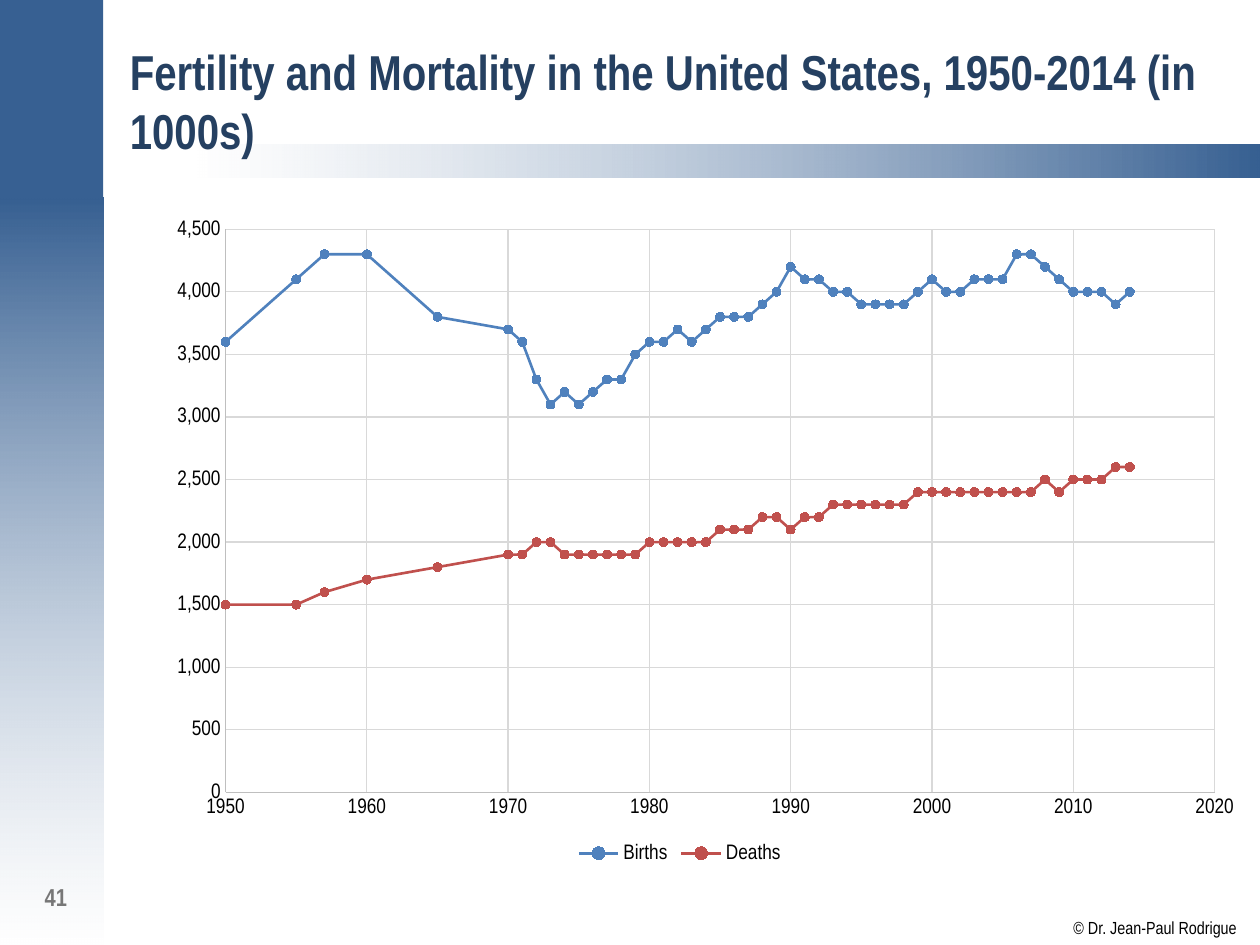
from dataclasses import dataclass
from typing import Any, Optional

from lxml import etree
from pptx import Presentation
from pptx.chart.data import XyChartData
from pptx.dml.color import RGBColor
from pptx.enum.chart import (
    XL_CHART_TYPE, XL_LEGEND_POSITION, XL_MARKER_STYLE, XL_TICK_MARK)
from pptx.enum.shapes import MSO_SHAPE
from pptx.enum.text import MSO_ANCHOR, PP_ALIGN
from pptx.oxml.ns import qn
from pptx.util import Inches, Pt

SCATTER = XL_CHART_TYPE.XY_SCATTER_LINES
BOTTOM = XL_LEGEND_POSITION.BOTTOM
CIRCLE = XL_MARKER_STYLE.CIRCLE
NO_TICK = XL_TICK_MARK.NONE
RECTANGLE = MSO_SHAPE.RECTANGLE
MIDDLE = MSO_ANCHOR.MIDDLE
LEFT, RIGHT = PP_ALIGN.LEFT, PP_ALIGN.RIGHT


@dataclass(frozen=True)
class Theme:
    font: str = "Arial Narrow"
    band: str = "376092"
    paper: str = "FFFFFF"
    title: str = "254061"
    ink: str = "000000"
    number: str = "777777"
    axis: str = "BFBFBF"
    grid: str = "D9D9D9"
    births: str = "4F81BD"
    deaths: str = "C0504D"
    title_size: int = 28
    number_size: int = 14
    chart_size: int = 12
    credit_size: int = 10


@dataclass(frozen=True)
class Box:
    left: float
    top: float
    width: float
    height: float

    def lengths(self) -> list[int]:
        return [Inches(v) for v in (self.left, self.top, self.width, self.height)]


@dataclass(frozen=True)
class Band:
    box: Box
    colors: tuple[str, ...]
    angle: int = 0
    fade: Optional[int] = None


@dataclass(frozen=True)
class Trend:
    name: str
    color: str
    thousands: list[int]


THEME = Theme()
BANDS = [
    Band(Box(-0.01, 1.57, 0.83, 5.93), (THEME.band, THEME.paper), 270, 51),
    Band(Box(1.57, 1.15, 8.43, 0.26), (THEME.paper, THEME.band), 0, 50),
    Band(Box(-0.01, -0.01, 0.83, 1.58), (THEME.band,)),
]
YEARS = [1950, 1955, 1957, 1960, 1965, *range(1970, 2015)]
TRENDS = [
    Trend("Births", THEME.births, [
        3600, 4100, 4300, 4300, 3800,
        3700, 3600, 3300, 3100, 3200, 3100, 3200, 3300, 3300, 3500,
        3600, 3600, 3700, 3600, 3700, 3800, 3800, 3800, 3900, 4000,
        4200, 4100, 4100, 4000, 4000, 3900, 3900, 3900, 3900, 4000,
        4100, 4000, 4000, 4100, 4100, 4100, 4300, 4300, 4200, 4100,
        4000, 4000, 4000, 3900, 4000]),
    Trend("Deaths", THEME.deaths, [
        1500, 1500, 1600, 1700, 1800,
        1900, 1900, 2000, 2000, 1900, 1900, 1900, 1900, 1900, 1900,
        2000, 2000, 2000, 2000, 2000, 2100, 2100, 2100, 2200, 2200,
        2100, 2200, 2200, 2300, 2300, 2300, 2300, 2300, 2300, 2400,
        2400, 2400, 2400, 2400, 2400, 2400, 2400, 2400, 2500, 2400,
        2500, 2500, 2500, 2600, 2600]),
]
CHART_BOX = Box(0.99, 1.65, 8.81, 5.24)
PLOT_BOX = Box(0.8, 0.17, 7.85, 4.47)


def apply(target: Any, values: dict[str, Any]) -> None:
    for name, value in values.items():
        setattr(target, name, value)


def style_font(font: Any, size: int, color: str, bold: bool = False) -> None:
    apply(font, {"name": THEME.font, "size": Pt(size), "bold": bold})
    font.color.rgb = RGBColor.from_string(color)


def style_line(line: Any, color: str, width: float) -> None:
    line.color.rgb = RGBColor.from_string(color)
    line.width = Pt(width)


def paint(fill: Any, color: str) -> None:
    fill.solid()
    fill.fore_color.rgb = RGBColor.from_string(color)


def draw_band(slide: Any, band: Band) -> None:
    shape = slide.shapes.add_shape(RECTANGLE, *band.box.lengths())
    shape.shadow.inherit = False
    shape.line.fill.background()
    if len(band.colors) == 1:
        paint(shape.fill, band.colors[0])
        return
    shape.fill.gradient()
    shape.fill.gradient_angle = band.angle
    for stop, color in zip(shape.fill.gradient_stops, band.colors):
        stop.color.rgb = RGBColor.from_string(color)
    for node in shape._element.spPr.iter(qn("a:srgbClr")):
        if node.get("val") == THEME.paper:
            etree.SubElement(node, qn("a:alpha"), val=str(band.fade * 1000))


def draw_label(slide: Any, box: Box, text: str, size: int, color: str,
               bold: bool, frame_format: dict[str, Any]) -> None:
    frame = slide.shapes.add_textbox(*box.lengths()).text_frame
    apply(frame, frame_format)
    paragraph = frame.paragraphs[0]
    paragraph.text = text
    paragraph.alignment = RIGHT if bold else LEFT
    style_font(paragraph.runs[0].font, size, color, bold)


def draw_title(slide: Any, box: Box, text: str) -> None:
    title = slide.shapes.title
    slide.shapes._spTree.append(title._element)
    apply(title, dict(zip(("left", "top", "width", "height"), box.lengths())))
    apply(title.text_frame,
          {"text": text, "word_wrap": True, "vertical_anchor": MIDDLE})
    heading = title.text_frame.paragraphs[0]
    heading.alignment = LEFT
    style_font(heading.runs[0].font, THEME.title_size, THEME.title, True)


def style_axis(axis: Any, number_format: str, limits: dict[str, int]) -> None:
    apply(axis, {"has_major_gridlines": True, "major_tick_mark": NO_TICK,
                 "minor_tick_mark": NO_TICK, **limits})
    apply(axis.tick_labels, {"number_format": number_format,
                             "number_format_is_linked": False})
    style_font(axis.tick_labels.font, THEME.chart_size, THEME.ink)
    style_line(axis.format.line, THEME.axis, 0.75)
    style_line(axis.major_gridlines.format.line, THEME.grid, 0.75)


def place_plot(chart: Any, box: Box, plot: Box) -> None:
    plot_area = chart._chartSpace.chart.plotArea
    for old in plot_area.findall(qn("c:layout")):
        plot_area.remove(old)
    layout = etree.Element(qn("c:layout"))
    manual = etree.SubElement(layout, qn("c:manualLayout"))
    settings = {
        "layoutTarget": "inner", "xMode": "edge", "yMode": "edge",
        "x": plot.left / box.width, "y": plot.top / box.height,
        "w": plot.width / box.width, "h": plot.height / box.height}
    for name, value in settings.items():
        etree.SubElement(manual, qn(f"c:{name}"), val=str(value))
    plot_area.insert(0, layout)


def draw_chart(slide: Any, box: Box, plot: Box, trends: list[Trend]) -> None:
    data = XyChartData()
    for trend in trends:
        points = data.add_series(trend.name)
        for year, value in zip(YEARS, trend.thousands, strict=True):
            points.add_data_point(year, value)
    chart = slide.shapes.add_chart(SCATTER, *box.lengths(), data).chart
    apply(chart, {"has_title": False, "has_legend": True})
    style_font(chart.font, THEME.credit_size, THEME.ink)
    apply(chart.legend, {"position": BOTTOM, "include_in_layout": False})
    style_font(chart.legend.font, THEME.chart_size, THEME.ink)
    style_axis(chart.category_axis, "General", {"minimum_scale": 1950})
    style_axis(chart.value_axis, "#,##0", {"maximum_scale": 4500})
    place_plot(chart, box, plot)
    chart.plots[0].vary_by_categories = False
    for series, trend in zip(chart.plots[0].series, trends):
        series.smooth = False
        style_line(series.format.line, trend.color, 1.5)
        apply(series.marker, {"style": CIRCLE, "size": 5})
        paint(series.marker.format.fill, trend.color)
        style_line(series.marker.format.line, trend.color, 0.75)


def main() -> None:
    deck = Presentation()
    apply(deck, {"slide_width": Inches(10), "slide_height": Inches(7.5)})
    slide = deck.slides.add_slide(deck.slide_layouts[5])
    for band in BANDS:
        draw_band(slide, band)
    margins = ("margin_left", "margin_top", "margin_right", "margin_bottom")
    draw_label(slide, Box(8.52, 7.28, 1.3, 0.17), "© Dr. Jean-Paul Rodrigue",
               THEME.credit_size, THEME.ink, False,
               {"word_wrap": False, **dict.fromkeys(margins, 0)})
    draw_title(slide, Box(0.93, 0.17, 8.9, 1.25),
               "Fertility and Mortality in the United States, 1950-2014 (in 1000s)")
    draw_chart(slide, CHART_BOX, PLOT_BOX, TRENDS)
    draw_label(slide, Box(0.21, 6.95, 0.42, 0.42), "41", THEME.number_size,
               THEME.number, True, {"word_wrap": True})
    deck.save("out.pptx")


if __name__ == "__main__":
    main()
